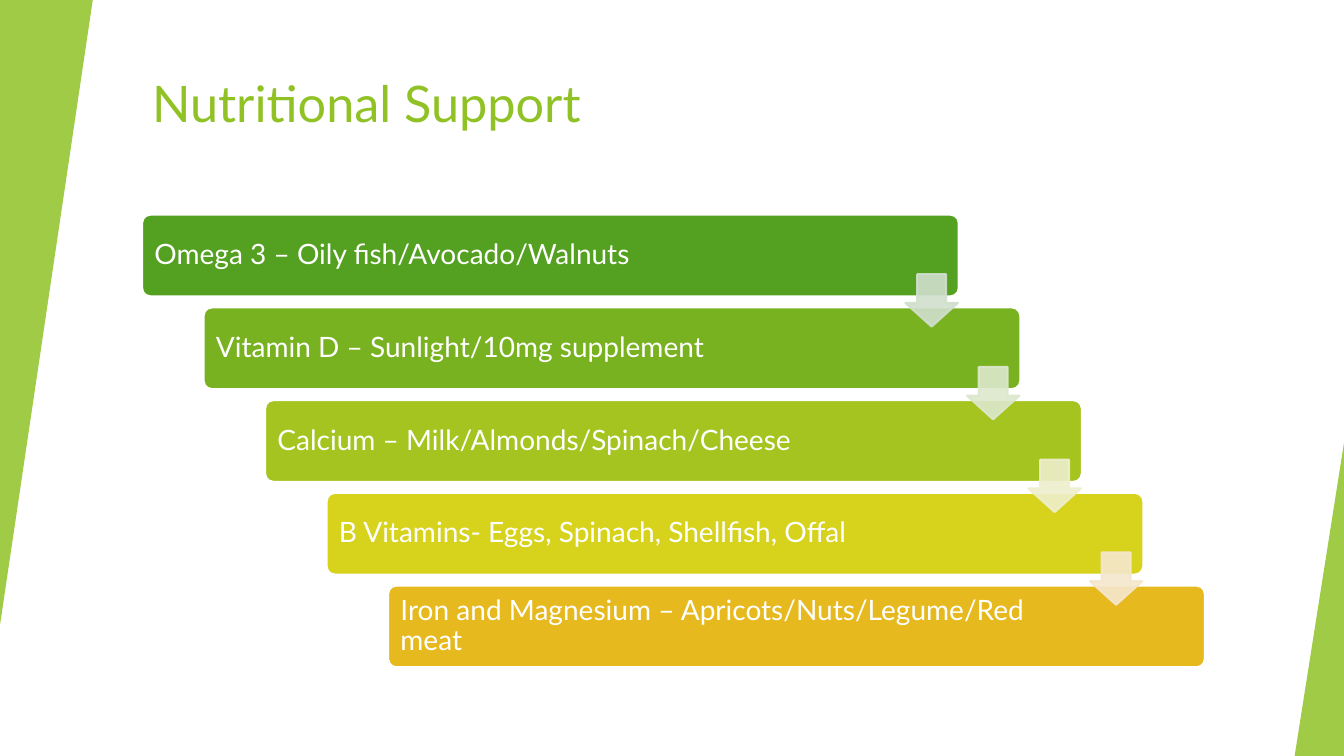
from lxml.etree import SubElement
from pptx import Presentation
from pptx.dml.color import RGBColor
from pptx.enum.shapes import MSO_SHAPE
from pptx.enum.text import MSO_ANCHOR, PP_ALIGN
from pptx.oxml.ns import qn
from pptx.util import Inches, Pt

WHITE = RGBColor(0xFF, 0xFF, 0xFF)
LIME = RGBColor(0x90, 0xC2, 0x26)
STEPS = [
    ("Omega 3 – Oily fish/Avocado/Walnuts", RGBColor(0x54, 0xA0, 0x21)),
    ("Vitamin D – Sunlight/10mg supplement", RGBColor(0x79, 0xB2, 0x20)),
    ("Calcium – Milk/Almonds/Spinach/Cheese", RGBColor(0xA5, 0xC4, 0x1F)),
    ("B Vitamins- Eggs, Spinach, Shellfish, Offal", RGBColor(0xD7, 0xD3, 0x1D)),
    ("Iron and Magnesium – Apricots/Nuts/Legume/Red meat",
     RGBColor(0xE6, 0xB9, 0x1E)),
]
ARROWS = [
    RGBColor(0xD1, 0xDF, 0xCD),
    RGBColor(0xDC, 0xE8, 0xCC),
    RGBColor(0xEE, 0xEF, 0xCC),
    RGBColor(0xF5, 0xE7, 0xCD),
]
LEFT, TOP = 1.41, 2.13
SHIFT, DROP = 0.61, 0.92


class Painter:
    font = "Lato"

    def __init__(self, slide):
        self.shapes = slide.shapes

    def fade(self, shape, alpha):
        for color in shape.element.spPr.iter(qn("a:srgbClr")):
            SubElement(color, qn("a:alpha")).set("val", str(alpha * 1000))

    def shape(self, kind, box, color, adjust, edge=None, alpha=None):
        shape = self.shapes.add_shape(kind, *map(Inches, box))
        shape.shadow.inherit = False
        for i, value in enumerate(adjust):
            shape.adjustments[i] = value
        shape.fill.solid()
        shape.fill.fore_color.rgb = color
        if edge is None:
            shape.line.fill.background()
        else:
            shape.line.color.rgb = edge
            shape.line.width = Pt(1.5)
        if alpha:
            self.fade(shape, alpha)
        return shape

    def label(self, frame, text, size, color):
        frame.word_wrap = True
        frame.text = text
        line = frame.paragraphs[0]
        line.alignment = PP_ALIGN.LEFT
        font = line.runs[0].font
        font.name = self.font
        font.size = Pt(size)
        font.color.rgb = color
        return line

    def title(self, text, box):
        title = self.shapes.add_textbox(*map(Inches, box))
        self.label(title.text_frame, text, 36, LIME)

    def wedge(self, box, turn=0):
        wedge = self.shape(MSO_SHAPE.ISOSCELES_TRIANGLE, box, LIME, [1], alpha=85)
        wedge.rotation = turn

    def bar(self, text, left, top, color):
        bar = self.shape(MSO_SHAPE.ROUNDED_RECTANGLE, (left, top, 8.1, 0.81),
                         color, [0.1], WHITE)
        frame = bar.text_frame
        frame.vertical_anchor = MSO_ANCHOR.MIDDLE
        frame.margin_left = Inches(0.1)
        frame.margin_right = Inches(1.23)
        frame.margin_top = frame.margin_bottom = Inches(0.08)
        self.label(frame, text, 20, WHITE).line_spacing = 0.9

    def arrow(self, left, top, color):
        self.shape(MSO_SHAPE.DOWN_ARROW, (left, top, 0.52, 0.52),
                   color, [0.55, 0.45], color, 90)


def main():
    deck = Presentation()
    deck.slide_width = Inches(13.33)
    deck.slide_height = Inches(7.5)
    art = Painter(deck.slides.add_slide(deck.slide_layouts[6]))
    art.title("Nutritional Support", (1.41, 0.67, 11.15, 1.2))
    art.wedge((0, 0, 0.92, 6.2), 180)
    art.wedge((12.84, 4.39, 0.49, 3.11))
    for i, (text, color) in enumerate(STEPS):
        art.bar(text, LEFT + i * SHIFT, TOP + i * DROP, color)
    for i, color in enumerate(ARROWS):
        art.arrow(LEFT + 7.57 + i * SHIFT, TOP + 0.59 + i * DROP, color)
    deck.save("out.pptx")


if __name__ == "__main__":
    main()
